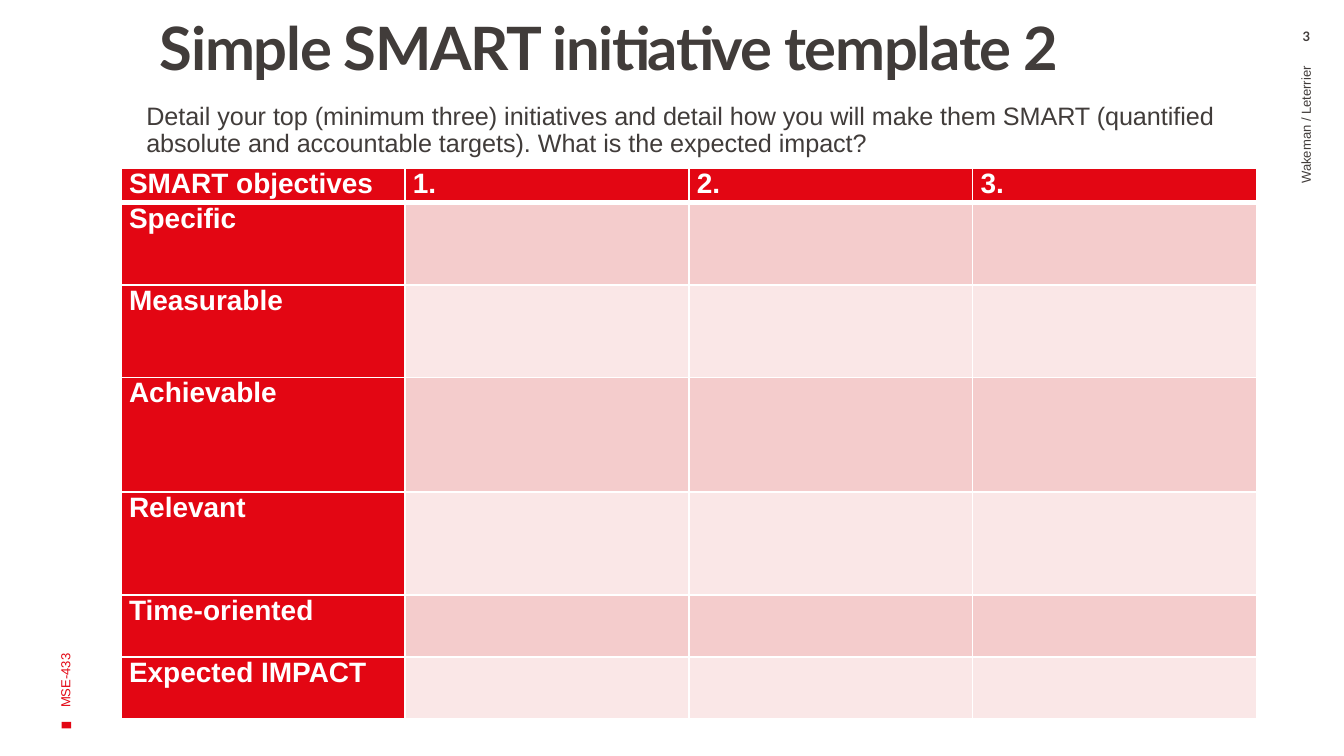
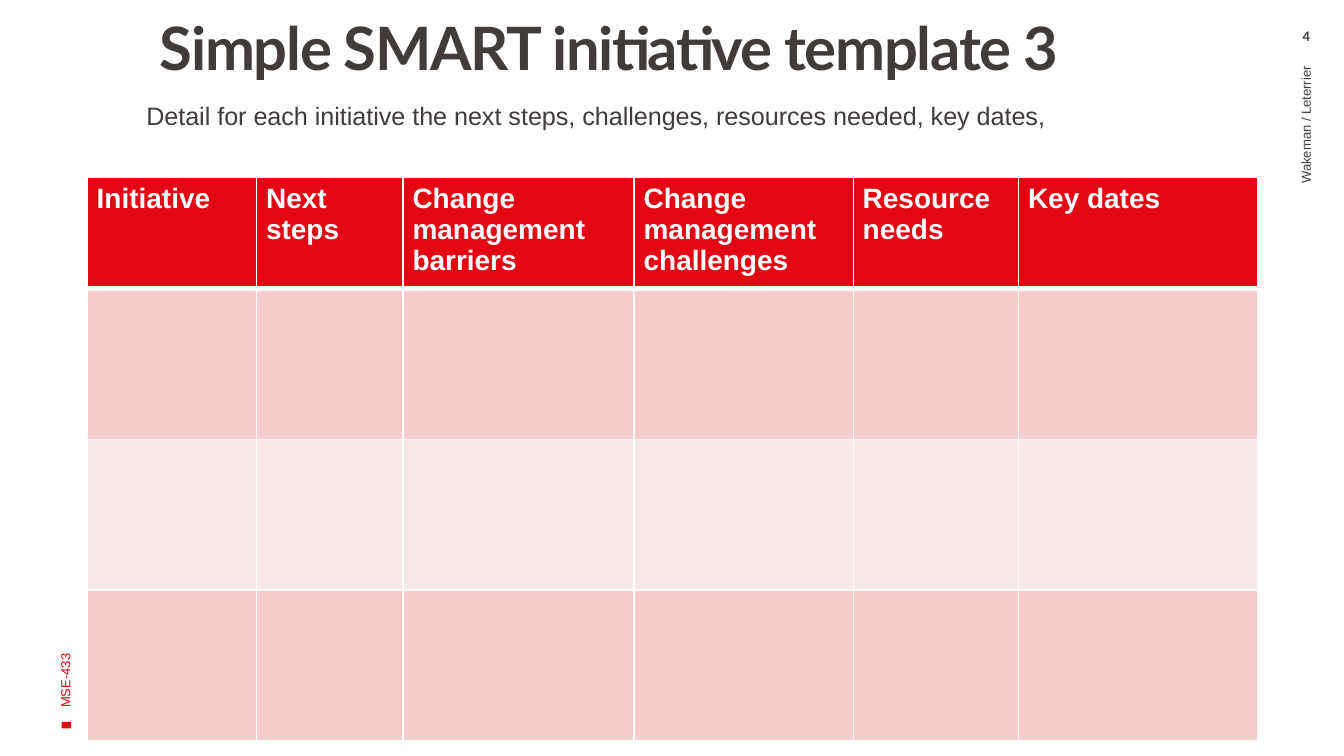
from pptx import Presentation
from pptx.dml.color import RGBColor
from pptx.enum.shapes import MSO_SHAPE as SHAPE
from pptx.enum.text import MSO_ANCHOR as ANCHOR, PP_ALIGN as ALIGN
from pptx.oxml import parse_xml
from pptx.oxml.ns import nsdecls
from pptx.util import Inches, Pt

# Shared style
RED, DARK, WHITE = "E30613", "413C3A", "FFFFFF"
BANDS = ("F4CCCC", "FAE7E7")
BODY_FONT, TITLE_FONT = "Arial", "Lato"
DEFAULT_INSETS = (0.1, 0.05, 0.1, 0.05)


def rgb(color):
    return RGBColor.from_string(color)


def set_margins(target, insets):
    left, top, right, bottom = map(Inches, insets)
    target.margin_left, target.margin_top = left, top
    target.margin_right, target.margin_bottom = right, bottom


def style_run(r, size, color, font=BODY_FONT, bold=False):
    r.font.name, r.font.size, r.font.bold = font, Pt(size), bold
    r.font.color.rgb = rgb(color)


def add_text(s, box, text, size, color, font=BODY_FONT, bold=False, align=ALIGN.LEFT,
             anchor=ANCHOR.TOP, insets=DEFAULT_INSETS, spacing=1.0, rotation=0):
    sp = s.shapes.add_textbox(*map(Inches, box))
    sp.rotation = rotation
    tf = sp.text_frame
    tf.word_wrap, tf.vertical_anchor = True, anchor
    set_margins(tf, insets)
    p = tf.paragraphs[0]
    p.text, p.alignment, p.line_spacing = text, align, spacing
    style_run(p.runs[0], size, color, font, bold)
    return p


# Slide furniture: title, instruction, page number and vertical labels
def add_frame(prs, title, title_width, instruction, number):
    s = prs.slides.add_slide(prs.slide_layouts[6])
    s.background.fill.solid()
    s.background.fill.fore_color.rgb = rgb(WHITE)

    marker = s.shapes.add_shape(SHAPE.RECTANGLE, *map(Inches, (0.47, 5.36, 0.05, 0.07)))
    marker.rotation = 270
    marker.shadow.inherit = False
    marker.fill.solid()
    marker.fill.fore_color.rgb = rgb(RED)
    marker.line.fill.background()

    p = add_text(s, (0.99, 0.14, title_width, 1.17), title, 32, DARK, TITLE_FONT, True,
                 insets=(0.2, 0, 0.08, 0.05), spacing=0.9)
    p.runs[0].font._element.set("spc", "-70")
    add_text(s, (-1.34, 3.04, 3.65, 1), "MSE-433", 7, RED,
             anchor=ANCHOR.MIDDLE, rotation=270)
    add_text(s, (7.78, 2.05, 3.87, 0.56), "Wakeman / Leterrier", 7, DARK,
             align=ALIGN.RIGHT, anchor=ANCHOR.MIDDLE, rotation=270)
    add_text(s, (9.44, 0.21, 0.56, 0.18), str(number), 7, DARK, TITLE_FONT, True,
             align=ALIGN.CENTER, insets=(0.1, 0, 0.1, 0))
    add_text(s, (0.99, 0.72, 8.45, 4.69), instruction, 13.5, DARK, spacing=0.9)
    return s


# Tables: red header cells, banded body, white rules
def set_borders(cell, top, bottom):
    tc_pr = cell._tc.get_or_add_tcPr()
    for side, width in (("L", 1), ("R", 1), ("T", top), ("B", bottom)):
        tc_pr.append(parse_xml(
            f'<a:ln{side} {nsdecls("a")} w="{Pt(width)}"><a:solidFill>'
            f'<a:srgbClr val="{WHITE}"/></a:solidFill></a:ln{side}>'))


def add_table(s, left, top, cols, rows, texts, insets, align=ALIGN.LEFT, after=0):
    """Texts maps (row, column) to the label of a red cell."""
    frame = s.shapes.add_table(len(rows), len(cols), Inches(left), Inches(top),
                               Inches(sum(cols)), Inches(sum(rows)))
    table = frame.table
    for column, width in zip(table.columns, cols):
        column.width = Inches(width)
    for i, height in enumerate(rows):
        table.rows[i].height = Inches(height)
        for j in range(len(cols)):
            cell = table.cell(i, j)
            label = texts.get((i, j))
            set_borders(cell, 3 if i == 1 else 1, 3 if i == 0 else 1)
            cell.fill.solid()
            cell.fill.fore_color.rgb = rgb(RED if label else BANDS[(i - 1) % 2])
            if label:
                set_margins(cell, insets)
                p = cell.text_frame.paragraphs[0]
                p.text, p.alignment, p.space_after = label, align, Pt(after)
                style_run(p.runs[0], 15, WHITE, bold=True)


def main():
    prs = Presentation()
    prs.slide_width = Inches(10)
    prs.slide_height = prs.slide_width * 9 // 16

    # SMART objectives
    s = add_frame(prs, "Simple SMART initiative template 2", 7.95,
                  "Detail your top (minimum three) initiatives and detail how you will "
                  "make them SMART (quantified absolute and accountable targets). "
                  "What is the expected impact?", 3)
    header = ["SMART objectives", "1.", "2.", "3."]
    criteria = ["Specific", "Measurable", "Achievable", "Relevant",
                "Time-oriented", "Expected IMPACT"]
    texts = {(0, j): label for j, label in enumerate(header)}
    texts.update({(i, 0): label for i, label in enumerate(criteria, 1)})
    add_table(s, 0.9, 1.25, [8.45 / 4] * 4, [0.26, 0.61, 0.69, 0.85, 0.77, 0.46, 0.46],
              texts, (0.06, 0, 0.06, 0), ALIGN.JUSTIFY, after=12)

    # Initiative planning
    s = add_frame(prs, "Simple SMART initiative template 3", 8.11,
                  "Detail for each initiative the next steps, challenges, "
                  "resources needed, key dates,", 4)
    header = ["Initiative", "Next steps", "Change management barriers",
              "Change management challenges", "Resource needs", "Key dates"]
    add_table(s, 0.65, 1.32, [1.26, 1.09, 1.72, 1.63, 1.23, 1.78], [0.82] + [1.12] * 3,
              {(0, j): label for j, label in enumerate(header)}, (0.07, 0.04, 0.07, 0.04))

    prs.save("out.pptx")


if __name__ == "__main__":
    main()
